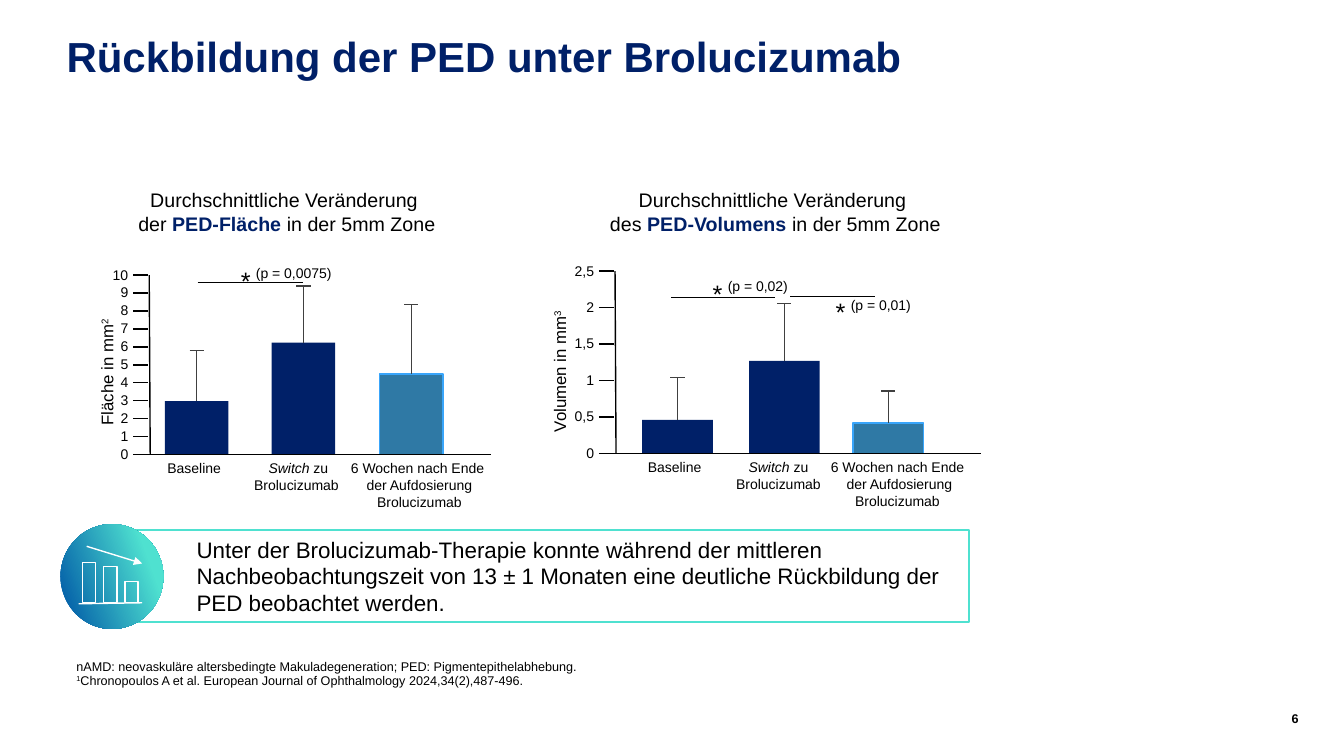
from dataclasses import dataclass

from lxml.etree import SubElement
from pptx import Presentation
from pptx.dml.color import RGBColor
from pptx.enum.shapes import MSO_CONNECTOR, MSO_SHAPE
from pptx.enum.text import MSO_ANCHOR, MSO_AUTO_SIZE, PP_ALIGN
from pptx.oxml.ns import qn
from pptx.util import Inches, Pt

COLORS = {
    "text": "000000", "navy": "002068", "steel": "2F79A5", "sky": "39A5FA",
    "error": "404040", "mint": "4FE1D0", "blue": "0562A9", "white": "FFFFFF",
}


@dataclass
class Plot:
    heading: tuple
    heading_box: tuple
    unit_text: str
    unit_power: str
    unit_box: tuple
    axis_x: float
    axis_end: float
    zero_y: float
    unit: float
    ticks: tuple
    tick_width: float
    bar_width: float
    bars: tuple
    categories: tuple
    category_boxes: tuple
    brackets: tuple
    p_values: tuple


def rgb(name):
    return RGBColor.from_string(COLORS[name])


def write(frame, paragraphs, size, align=PP_ALIGN.LEFT, spacing=None):
    for number, runs in enumerate(paragraphs):
        paragraph = frame.paragraphs[0] if number == 0 else frame.add_paragraph()
        paragraph.alignment = align
        if spacing:
            paragraph.line_spacing = spacing
        for text, style in runs:
            run = paragraph.add_run()
            run.text = text
            run.font.name = "Arial"
            run.font.size = Pt(size)
            run.font.bold = style in ("bold", "accent")
            run.font.italic = style == "italic"
            run.font.color.rgb = rgb("navy" if style == "accent" else "text")
            if style == "super":
                run._r.get_or_add_rPr().set("baseline", "30000")


def set_margins(frame, left, top, right, bottom):
    frame.margin_left, frame.margin_top = Inches(left), Inches(top)
    frame.margin_right, frame.margin_bottom = Inches(right), Inches(bottom)


def add_text(slide, box, paragraphs, size, align=PP_ALIGN.LEFT, wrap=True, spacing=None):
    label = slide.shapes.add_textbox(*map(Inches, box))
    label.text_frame.word_wrap = wrap
    write(label.text_frame, paragraphs, size, align, spacing)
    return label


def add_line(slide, x1, y1, x2, y2, color="text", arrow=False):
    line = slide.shapes.add_connector(
        MSO_CONNECTOR.STRAIGHT, *map(Inches, (x1, y1, x2, y2)))
    line.line.color.rgb = rgb(color)
    line.line.width = Pt(1)
    if arrow:
        SubElement(line.line._get_or_add_ln(), qn("a:tailEnd"), type="triangle")
    SubElement(line._element.spPr, qn("a:effectLst"))
    return line


def add_box(slide, box, fill=None, line=None, width=1, kind=MSO_SHAPE.RECTANGLE):
    shape = slide.shapes.add_shape(kind, *map(Inches, box))
    shape.shadow.inherit = False
    if fill:
        shape.fill.solid()
        shape.fill.fore_color.rgb = rgb(fill)
    else:
        shape.fill.background()
    if line:
        shape.line.color.rgb = rgb(line)
        shape.line.width = Pt(width)
    else:
        shape.line.fill.background()
    return shape


def add_bar(slide, plot, center, value, error_top, fill, outline):
    top, cap_y = (plot.zero_y - v * plot.unit for v in (value, error_top))
    bar = add_box(slide, (center - plot.bar_width / 2, top, plot.bar_width,
                          plot.zero_y - top), fill, outline)
    stem = add_line(slide, center, top, center, cap_y, "error")
    stem.begin_connect(bar, 0)
    add_line(slide, center - 0.07, cap_y, center + 0.07, cap_y, "error")


def add_plot(slide, plot):
    add_text(slide, plot.heading_box, plot.heading, 14, PP_ALIGN.CENTER, wrap=False)
    unit_label = add_text(slide, plot.unit_box, [
        [(plot.unit_text, ""), (plot.unit_power, "super")]], 12, PP_ALIGN.CENTER)
    unit_label.rotation = 270
    for value in plot.ticks:
        y = plot.zero_y - value * plot.unit
        add_line(slide, plot.axis_x - 0.15, y, plot.axis_x, y)
        tick_text = f"{value:g}".replace(".", ",")
        add_text(slide, (plot.axis_x - 0.1 - plot.tick_width, y - 0.14, plot.tick_width, 0.19),
                 [[(tick_text, "")]], 10, PP_ALIGN.RIGHT)
    axis_top = plot.zero_y - plot.ticks[-1] * plot.unit
    add_line(slide, plot.axis_x + 0.01, axis_top, plot.axis_x + 0.02, plot.zero_y)
    for bar in plot.bars:
        add_bar(slide, plot, *bar)
    add_line(slide, plot.axis_x, plot.zero_y, plot.axis_end, plot.zero_y)
    for category, (left, width) in zip(plot.categories, plot.category_boxes):
        add_text(slide, (left, plot.zero_y, width, 0.61), category, 10, PP_ALIGN.CENTER)
    for x1, x2, y in plot.brackets:
        add_line(slide, x1, y, x2, y)
    for star_x, star_y, text_x, text_y, text in plot.p_values:
        add_text(slide, (star_x, star_y, 0.55, 0.29), [[("*", "")]], 18, wrap=False)
        add_text(slide, (text_x, text_y, 1.7, 0.19), [[(text, "")]], 10)


def heading(article, measure):
    return ([("Durchschnittliche Veränderung ", "")],
            [(article, ""), (measure, "accent"), ("in der 5mm Zone", "")])


def categories(switch_end, last_end):
    return ([[("Baseline ", "")]],
            [[("Switch", "italic"), (switch_end, "")], [("Brolucizumab ", "")]],
            [[("6 Wochen nach Ende ", "")], [("der Aufdosierung", "")], [(last_end, "")]])


def add_title(slide):
    title = slide.shapes.title
    title.left, title.top = Inches(0.66), Inches(0.34)
    title.width, title.height = Inches(12.21), Inches(1.17)
    frame = title.text_frame
    frame.auto_size = MSO_AUTO_SIZE.NONE
    frame.vertical_anchor = MSO_ANCHOR.TOP
    set_margins(frame, 0, 0, 0, 0)
    write(frame, [[("Rückbildung der PED unter Brolucizumab", "accent")]], 30, spacing=0.95)


def add_conclusion(slide):
    conclusion = add_box(slide, (1.04, 5.26, 8.57, 0.91), line="mint", width=1.5)
    frame = conclusion.text_frame
    frame.word_wrap = True
    frame.vertical_anchor = MSO_ANCHOR.MIDDLE
    set_margins(frame, 0.91, 0.05, 0.1, 0.05)
    write(frame, [[("Unter der Brolucizumab-Therapie konnte während der mittleren "
                    "Nachbeobachtungszeit von 13 ± 1 Monaten eine deutliche "
                    "Rückbildung der PED beobachtet werden.", "")]], 16)


def add_icon(slide):
    disc = add_box(slide, (0.6, 5.2, 1.02, 1.04), kind=MSO_SHAPE.OVAL)
    disc.fill.gradient()
    disc.fill.gradient_angle = 20
    for stop, color, position in zip(disc.fill.gradient_stops, ("blue", "mint"), (0.09, 0.81)):
        stop.color.rgb = rgb(color)
        stop.position = position
    for number, height in enumerate((0.4, 0.36, 0.21)):
        add_box(slide, (0.82 + 0.21 * number, 5.98 - height, 0.13, height), line="white")
    add_line(slide, 0.78, 5.99, 1.41, 5.98, "white")
    add_line(slide, 0.86, 5.42, 1.41, 5.59, "white", arrow=True)


def add_footer(slide):
    notes = add_text(slide, (0.66, 6.24, 9.3, 0.64), [
        [("nAMD: neovaskuläre altersbedingte Makuladegeneration; "
          "PED: Pigmentepithelabhebung.", "")],
        [("1", "super"), ("Chronopoulos A et al. European Journal of Ophthalmology "
                          "2024,34(2),487-496.", "")]], 9, spacing=0.95)
    notes.text_frame.vertical_anchor = MSO_ANCHOR.BOTTOM
    page = add_text(slide, (12.37, 7.05, 0.51, 0.2), [[("6", "bold")]], 9, PP_ALIGN.RIGHT)
    set_margins(page.text_frame, 0, 0, 0, 0)


def main():
    deck = Presentation()
    deck.slide_width, deck.slide_height = Inches(13.33), Inches(7.5)
    slide = deck.slides.add_slide(deck.slide_layouts[5])
    area = Plot(
        heading("der ", "PED-Fläche "), (1.22, 1.82, 3.25, 0.57),
        "Fläche in mm", "2", (0.42, 3.43, 1.51, 0.53),
        1.47, 4.87, 4.51, 0.178, tuple(range(11)), 0.68, 0.63,
        ((1.95, 2.98, 5.8, "navy", None), (3.01, 6.24, 9.4, "navy", None),
         (4.08, 4.49, 8.37, "steel", "sky")),
        categories(" zu", "Brolucizumab"), ((1.19, 1.51), (2.08, 1.76), (3.28, 1.76)),
        ((1.96, 3.01, 2.8),), ((2.29, 2.58, 2.44, 2.57, "(p = 0,0075)"),))
    volume = Plot(
        heading("des ", "PED-Volumens "), (5.94, 1.82, 3.5, 0.57),
        "Volumen in mm", "3", (4.94, 3.39, 1.51, 0.59),
        6.09, 9.73, 4.5, 0.724, (0, 0.5, 1, 1.5, 2, 2.5), 0.76, 0.7,
        ((6.72, 0.46, 1.04, "navy", None), (7.78, 1.27, 2.06, "navy", None),
         (8.81, 0.42, 0.86, "steel", "sky")),
        categories(" zu ", "Brolucizumab "), ((5.87, 1.68), (6.76, 1.96), (7.94, 1.96)),
        ((6.66, 7.69, 2.95), (7.84, 8.68, 2.94)),
        ((6.97, 2.71, 7.12, 2.7, "(p = 0,02)"), (8.19, 2.89, 8.34, 2.89, "(p = 0,01)")))
    add_title(slide)
    add_conclusion(slide)
    add_icon(slide)
    add_footer(slide)
    for plot in (area, volume):
        add_plot(slide, plot)
    deck.save("out.pptx")


if __name__ == "__main__":
    main()
